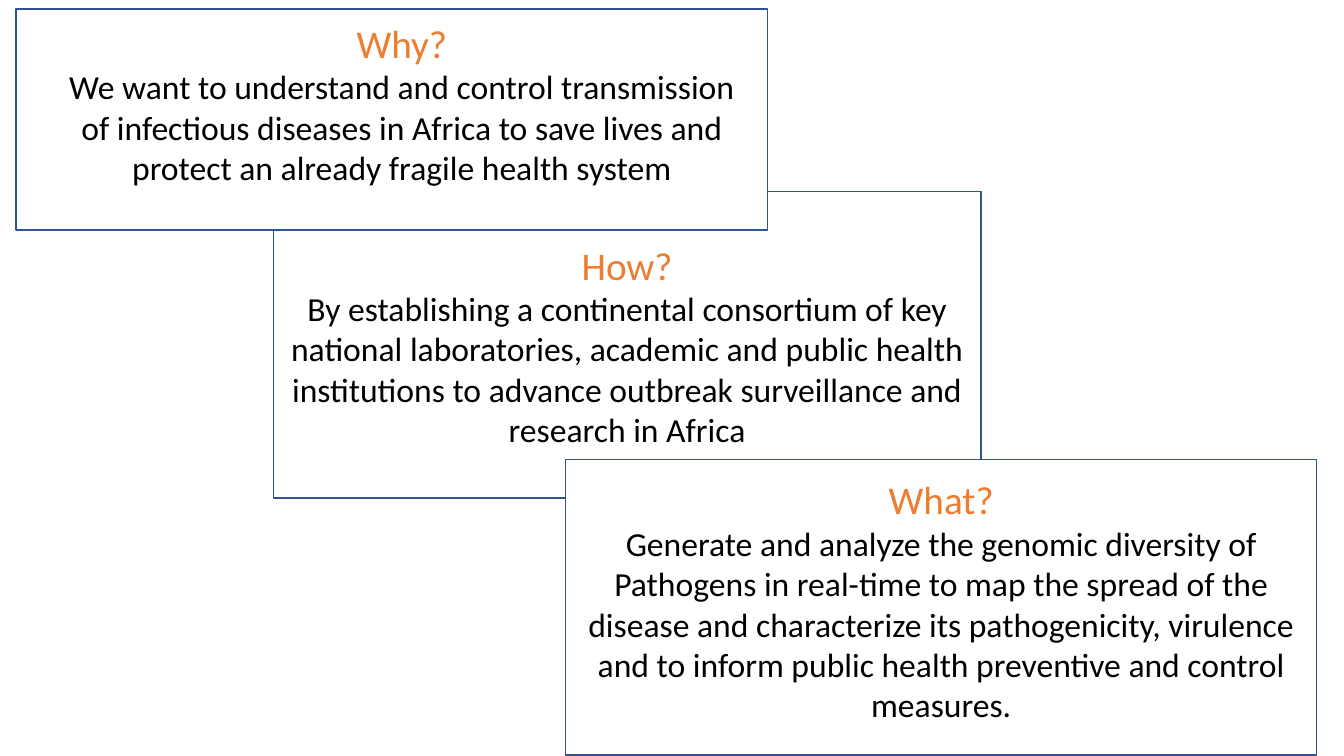
from pptx import Presentation
from pptx.dml.color import RGBColor
from pptx.enum.shapes import MSO_SHAPE
from pptx.enum.text import MSO_ANCHOR, PP_ALIGN
from pptx.util import Inches, Pt

WHITE = RGBColor(0xFF, 0xFF, 0xFF)
BLACK = RGBColor(0x00, 0x00, 0x00)
ORANGE = RGBColor(0xED, 0x7D, 0x31)
BORDER_BLUE = RGBColor(0x31, 0x53, 0x8F)

presentation = Presentation()
presentation.slide_width = Inches(13.33)
presentation.slide_height = Inches(7.5)
slide = presentation.slides.add_slide(presentation.slide_layouts[6])

# Boxes from back to front: heading, body, position and size, (left, top, right) margins
boxes = [
    ("How?",
     "By establishing a continental consortium of key national laboratories, "
     "academic and public health institutions to advance outbreak surveillance "
     "and research in Africa",
     (2.71, 1.9, 7.02, 3.04), (0.1, 0.49, 0.1)),
    ("What?",
     "Generate and analyze the genomic diversity of Pathogens in real-time to map "
     "the spread of the disease and characterize its pathogenicity, virulence and "
     "to inform public health preventive and control measures.",
     (5.61, 4.56, 7.45, 2.93), (0.1, 0.16, 0.1)),
    ("Why?",
     "We want to understand and control transmission of infectious diseases in "
     "Africa to save lives and protect an already fragile health system",
     (0.16, 0.09, 7.45, 2.19), (0.37, 0.1, 0.17)),
]

for heading, body, bounds, margins in boxes:
    # Bordered white box
    shape = slide.shapes.add_shape(
        MSO_SHAPE.RECTANGLE, *[Inches(length) for length in bounds])
    shape.shadow.inherit = False
    shape.fill.solid()
    shape.fill.fore_color.rgb = WHITE
    shape.line.color.rgb = BORDER_BLUE
    shape.line.width = Pt(1)

    # Orange heading above black body text
    text_frame = shape.text_frame
    text_frame.word_wrap = True
    text_frame.vertical_anchor = MSO_ANCHOR.TOP
    left, top, right = margins
    text_frame.margin_left = Inches(left)
    text_frame.margin_top = Inches(top)
    text_frame.margin_right = Inches(right)
    text_frame.text = f"{heading}\n{body}"
    styles = [(28, ORANGE), (24, BLACK)]
    for paragraph, (size, color) in zip(text_frame.paragraphs, styles):
        paragraph.alignment = PP_ALIGN.CENTER
        font = paragraph.runs[0].font
        font.name = "Calibri"
        font.size = Pt(size)
        font.color.rgb = color

presentation.save("out.pptx")
